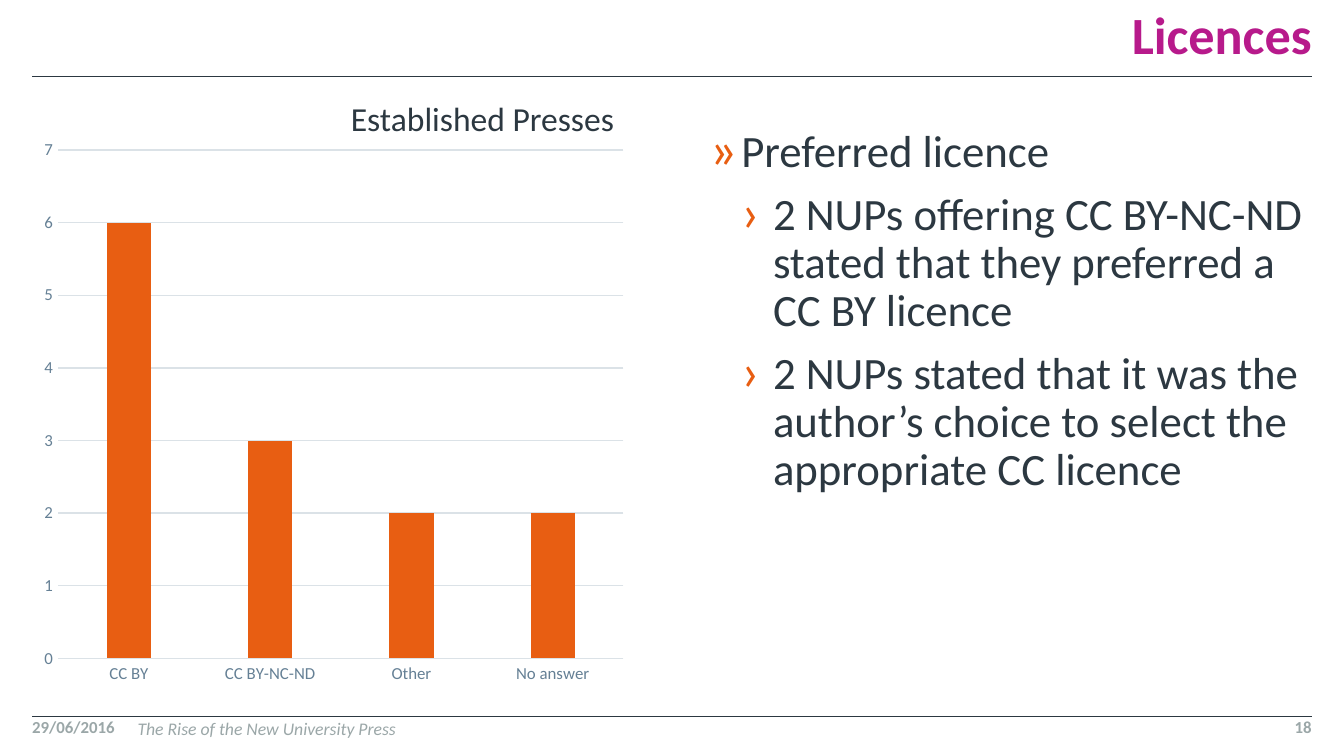
from lxml import etree
from pptx import Presentation
from pptx import util as u
from pptx.chart.data import CategoryChartData
from pptx.dml.color import RGBColor
from pptx.enum import chart as ch, shapes, text
from pptx.oxml.ns import qn

Cm, Pt = u.Cm, u.Pt
HUES = {"ink": "2C3841", "pink": "B71A8B", "fire": "E85E12",
        "grey": "9BA7A8", "axis": "658095", "grid": "DBE2E7"}
LEFT, RIGHT = 0.61, 24.79
FOOT, LOW = 13.54, 0.46
TOP, WIDE, HIGH = 2.44, 11.4, 10.69


def hue(key):
    return RGBColor.from_string(HUES[key])


def apply(obj, **vals):
    for key, val in vals.items():
        setattr(obj, key, val)


class Deck:
    face = "Calibri"

    def __init__(self, show):
        self.slide = show.slides.add_slide(show.slide_layouts[6])

    def font(self, font, size, tone, **more):
        apply(font, name=self.face, size=Pt(size), **more)
        font.color.rgb = hue(tone)

    def stroke(self, line, tone, width):
        line.color.rgb = hue(tone)
        line.width = Pt(width)

    def rule(self, y):
        line = self.slide.shapes.add_connector(
            shapes.MSO_CONNECTOR.STRAIGHT, Cm(LEFT), Cm(y), Cm(RIGHT), Cm(y))
        self.stroke(line.line, "ink", 0.5)
        etree.SubElement(line._element.spPr, qn("a:effectLst"))

    def box(self, at, inset=(0, 0, 0, 0), **more):
        frame = self.slide.shapes.add_textbox(*map(Cm, at)).text_frame
        sides = ("margin_left", "margin_top", "margin_right", "margin_bottom")
        form = dict(zip(sides, map(Cm, inset)))
        apply(frame, **{"word_wrap": True, **form, **more})
        return frame

    def label(self, words, at, size, tone, form=None, para=None, **more):
        line = self.box(at, **(form or {})).paragraphs[0]
        apply(line, **(para or {}))
        run = line.add_run()
        run.text = words
        self.font(run.font, size, tone, **more)

    def bullet(self, line, mark, indent):
        """Give a paragraph a coloured mark and a hanging indent."""
        props = line._p.get_or_add_pPr()
        props.set("marL", str(Cm(indent)))
        props.set("indent", str(-Cm(0.6)))
        tint = etree.SubElement(props, qn("a:buClr"))
        etree.SubElement(tint, qn("a:srgbClr"), val=HUES["fire"])
        etree.SubElement(props, qn("a:buSzPct"), val="120000")
        etree.SubElement(props, qn("a:buFont"), typeface=self.face)
        etree.SubElement(props, qn("a:buChar"), char=mark)

    def points(self, items, at, size):
        frame = self.box(at)
        for i, (level, words) in enumerate(items):
            line = frame.add_paragraph() if i else frame.paragraphs[0]
            self.bullet(line, "»›"[level], 0.6 * (level + 1))
            apply(line, level=level, line_spacing=0.9)
            if i:
                line.space_before = Pt(7.5)
            run = line.add_run()
            run.text = words
            self.font(run.font, size, "ink")

    def chart(self, cats, vals, at):
        data = CategoryChartData()
        data.categories = cats
        data.add_series("Series 1", vals)
        chart = self.slide.shapes.add_chart(
            ch.XL_CHART_TYPE.COLUMN_CLUSTERED, *map(Cm, at), data).chart
        apply(chart, has_legend=False, has_title=False)
        self.font(chart.font, 10, "ink")

        plot = chart.plots[0]
        apply(plot, gap_width=219, overlap=-27, vary_by_categories=False)
        fill = plot.series[0].format.fill
        fill.solid()
        fill.fore_color.rgb = hue("fire")

        none = ch.XL_TICK_MARK.NONE
        for axis in (chart.category_axis, chart.value_axis):
            apply(axis, major_tick_mark=none, minor_tick_mark=none)
            self.font(axis.tick_labels.font, 9, "axis")
        self.stroke(chart.category_axis.format.line, "grid", 0.75)
        value = chart.value_axis
        apply(value, minimum_scale=0, maximum_scale=7, major_unit=1)
        value.format.line.fill.background()
        self.stroke(value.major_gridlines.format.line, "grid", 0.75)


def main():
    show = Presentation()
    apply(show, slide_width=Cm(25.4), slide_height=Cm(14.29))
    deck = Deck(show)
    for y in (1.45, FOOT):
        deck.rule(y)

    right = text.PP_ALIGN.RIGHT
    deck.label("Licences", (7.7, 0, 17.09, 1.25), 28, "pink",
               {"vertical_anchor": text.MSO_ANCHOR.BOTTOM},
               {"alignment": right, "line_spacing": 0.9}, bold=True)
    deck.points([
        (0, "Preferred licence"),
        (1, "2 NUPs offering CC BY-NC-ND stated that they preferred a "
            "CC BY licence"),
        (1, "2 NUPs stated that it was the author’s choice to select the "
            "appropriate CC licence"),
    ], (13.41, TOP, WIDE, HIGH), 24)

    deck.label("29/06/2016", (LEFT, FOOT, 2, LOW), 9, "grey", bold=True)
    deck.label("The Rise of the New University Press",
               (2.6, FOOT, 20.2, LOW), 9.5, "grey",
               {"inset": (0, 0.03, 0, 0)}, italic=True)
    deck.label("18", (RIGHT - 2, FOOT, 2, LOW), 9, "grey",
               para={"alignment": right}, bold=True)

    deck.chart(["CC BY", "CC BY-NC-ND", "Other", "No answer"], [6, 3, 2, 2],
               (LEFT, TOP, WIDE, HIGH))
    deck.label("Established Presses", (6.43, 1.78, 5.58, 0.97), 18, "ink",
               {"inset": (0.2, 0.1, 0.2, 0.1), "word_wrap": False,
                "vertical_anchor": text.MSO_ANCHOR.MIDDLE,
                "auto_size": text.MSO_AUTO_SIZE.SHAPE_TO_FIT_TEXT},
               {"line_spacing": 0.99})
    show.save("out.pptx")


if __name__ == "__main__":
    main()
